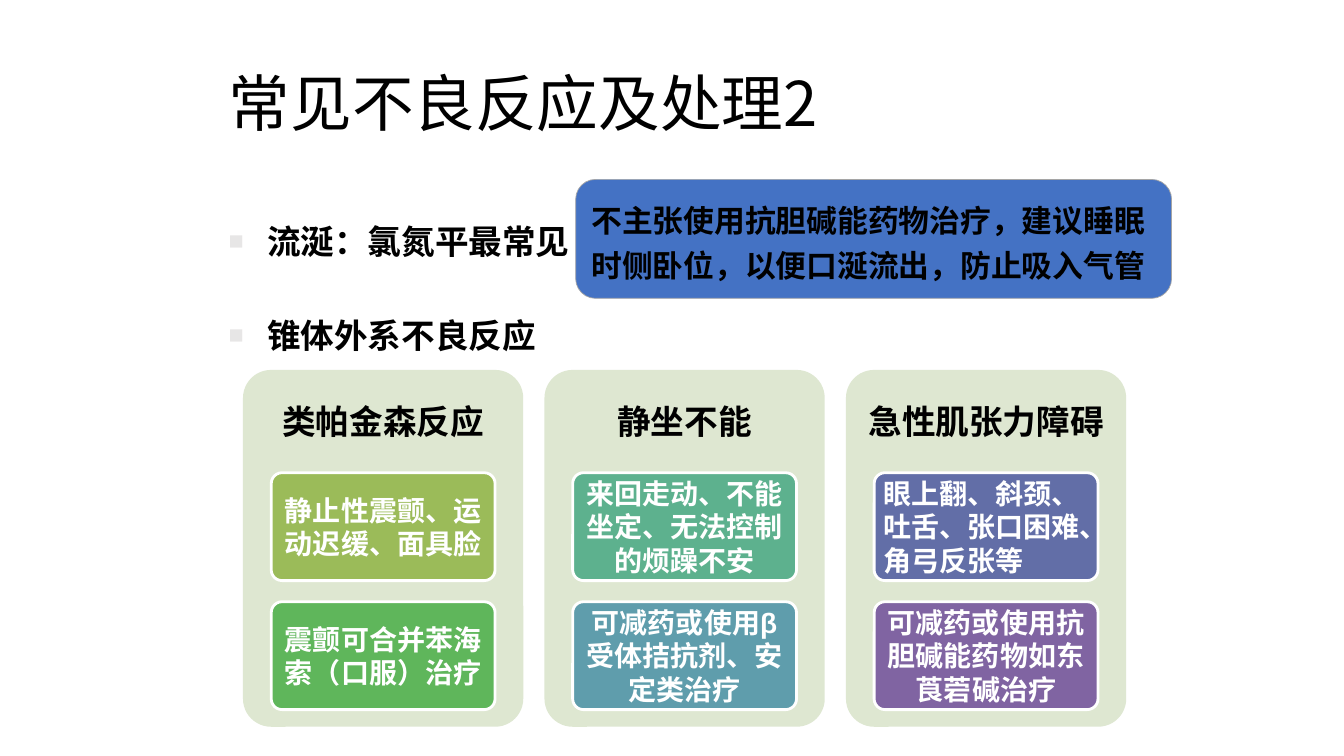
from pptx import Presentation
from pptx.dml.color import RGBColor
from pptx.enum.shapes import MSO_SHAPE as Shape
from pptx.enum.text import MSO_ANCHOR as Anchor, PP_ALIGN as Align
from pptx.oxml.ns import qn
from pptx.util import Inches, Pt
from lxml import etree

BLACK = RGBColor(0x00, 0x00, 0x00)
WHITE = RGBColor(0xFF, 0xFF, 0xFF)
BLUE = RGBColor(0x44, 0x72, 0xC4)
GREY = RGBColor(0xA5, 0xA5, 0xA5)
BULLET_GREY = RGBColor(0xE7, 0xE6, 0xE6)
PANEL = RGBColor(0xDE, 0xE7, 0xD1)
OLIVE = RGBColor(0x9B, 0xBB, 0x59)
GREEN = RGBColor(0x5F, 0xB6, 0x5B)
MINT = RGBColor(0x5D, 0xB1, 0x8E)
TEAL = RGBColor(0x5F, 0x9D, 0xAC)
INDIGO = RGBColor(0x62, 0x6E, 0xA7)
PURPLE = RGBColor(0x80, 0x64, 0xA2)

# heading, then (text, fill, alignment) for symptom and treatment
REACTIONS = [
    ("类帕金森反应",
     [("静止性震颤、运动迟缓、面具脸", OLIVE, Align.CENTER),
      ("震颤可合并苯海索（口服）治疗", GREEN, Align.CENTER)]),
    ("静坐不能",
     [("来回走动、不能坐定、无法控制的烦躁不安", MINT, Align.CENTER),
      ("可减药或使用β受体拮抗剂、安定类治疗", TEAL, Align.CENTER)]),
    ("急性肌张力障碍",
     [("眼上翻、斜颈、吐舌、张口困难、角弓反张等", INDIGO, Align.LEFT),
      ("可减药或使用抗胆碱能药物如东莨菪碱治疗", PURPLE, Align.CENTER)]),
]


def format_para(para, size, font, color=BLACK, bold=True, align=Align.LEFT, spacing=1.0):
    para.alignment = align
    para.line_spacing = spacing
    for span in para.runs:
        span.font.size = Pt(size)
        span.font.name = font
        span.font.bold = bold
        span.font.color.rgb = color


def set_frame(box, anchor, inset_x=0.1, inset_y=0.05):
    frame = box.text_frame
    frame.word_wrap = True
    frame.vertical_anchor = anchor
    frame.margin_left = frame.margin_right = Inches(inset_x)
    frame.margin_top = frame.margin_bottom = Inches(inset_y)
    return frame


def add_text_box(page, left, top, width, height):
    return page.shapes.add_textbox(Inches(left), Inches(top), Inches(width), Inches(height))


def add_round_box(page, left, top, width, height, fill, line=None, line_width=0.5):
    box = page.shapes.add_shape(Shape.ROUNDED_RECTANGLE, Inches(left), Inches(top),
                                Inches(width), Inches(height))
    box.shadow.inherit = False
    box.fill.solid()
    box.fill.fore_color.rgb = fill
    if line is None:
        box.line.fill.background()
    else:
        box.line.color.rgb = line
        box.line.width = Pt(line_width)
    return box


def add_bullet(para):
    props = para._p.get_or_add_pPr()
    props.set("marL", str(Inches(0.38)))
    props.set("indent", str(Inches(-0.38)))
    color = etree.SubElement(props, qn("a:buClr"))
    etree.SubElement(color, qn("a:srgbClr"), val=str(BULLET_GREY))
    etree.SubElement(props, qn("a:buSzPct"), val="75000")
    etree.SubElement(props, qn("a:buFont"), typeface="Arial")
    etree.SubElement(props, qn("a:buChar"), char="■")


def place_title(page, text):
    title = page.shapes.title
    title.left, title.top = Inches(2.17), Inches(0.5)
    title.width, title.height = Inches(9), Inches(1.12)
    frame = set_frame(title, Anchor.MIDDLE)
    frame.text = text
    format_para(frame.paragraphs[0], 44, "Noto Sans CJK SC", bold=False, spacing=0.9)


def add_bullet_list(page, items):
    frame = set_frame(add_text_box(page, 2.17, 1.94, 4.19, 1.73), Anchor.TOP)
    frame.text = "\n".join(items)
    for para, gap in zip(frame.paragraphs, (4, 24)):
        format_para(para, 24, "Arial", spacing=1.5)
        para.space_before = Pt(gap)
        add_bullet(para)


def add_callout(page, text):
    box = add_round_box(page, 5.71, 1.78, 5.91, 1.18, BLUE, GREY)
    frame = set_frame(box, Anchor.MIDDLE)
    frame.text = text
    format_para(frame.paragraphs[0], 22, "Calibri", spacing=1.2)


def add_card(page, left, top, text, fill, align):
    card = add_round_box(page, left, top, 2.22, 1.07, fill, WHITE, 2)
    card.adjustments[0] = 0.1
    frame = set_frame(card, Anchor.MIDDLE, 0.06, 0.04)
    frame.text = text
    format_para(frame.paragraphs[0], 20, "Arial", WHITE, align=align)


def add_reaction(page, left, heading, cards):
    """Panel with a heading and cards stacked below it."""
    top, width = 3.67, 2.78
    panel = add_round_box(page, left, top, width, 3.54, PANEL)
    panel.adjustments[0] = 0.1
    frame = set_frame(add_text_box(page, left, top, width, 1.06), Anchor.MIDDLE, 0.1, 0.1)
    frame.text = heading
    format_para(frame.paragraphs[0], 24, "Calibri", align=Align.CENTER, spacing=0.9)
    for row, card in enumerate(cards):
        add_card(page, left + 0.28, top + 1.02 + row * 1.28, *card)


def main():
    deck = Presentation()
    deck.slide_width, deck.slide_height = Inches(13.33), Inches(7.5)
    page = deck.slides.add_slide(deck.slide_layouts.get_by_name("Title Only"))
    place_title(page, "常见不良反应及处理2")
    add_bullet_list(page, ["流涎：氯氮平最常见", "锥体外系不良反应"])
    add_callout(page, "不主张使用抗胆碱能药物治疗，建议睡眠时侧卧位，以便口涎流出，防止吸入气管")
    for column, (heading, cards) in enumerate(REACTIONS):
        add_reaction(page, 2.41 + column * 2.99, heading, cards)
    deck.save("out.pptx")


if __name__ == "__main__":
    main()
